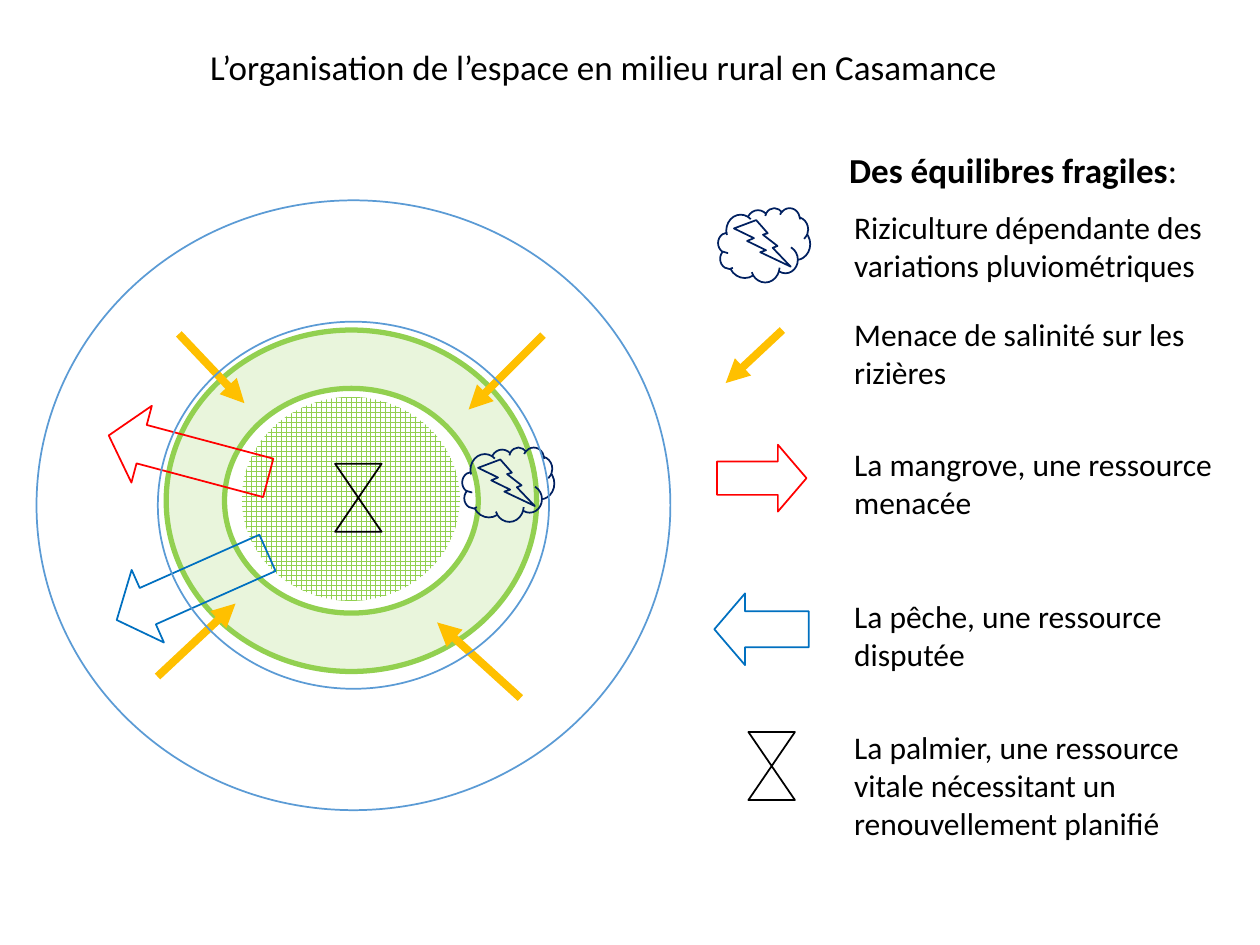
from lxml import etree
from pptx import Presentation
from pptx.dml.color import RGBColor
from pptx.enum import dml, shapes, text
from pptx.oxml import ns
from pptx.util import Pt

INK = {
    "black": "000000", "white": "FFFFFF", "green": "92D050", "gold": "FFC000",
    "red": "FF0000", "blue": "0070C0", "navy": "002060", "sky": "5B9BD5",
}
FONT = "Calibri"
KIND = shapes.MSO_SHAPE


def rgb(name):
    return RGBColor.from_string(INK[name])


def add_shape(slide, kind, box, line=None, width=1, turn=0, adj=()):
    """Add an unfilled preset shape; box is left, top, width, height."""
    shape = slide.shapes.add_shape(kind, *map(Pt, box))
    shape.shadow.inherit = False
    shape.rotation = turn
    for i, value in enumerate(adj):
        shape.adjustments[i] = value
    shape.fill.background()
    if line:
        shape.line.color.rgb = rgb(line)
        shape.line.width = Pt(width)
    else:
        shape.line.fill.background()
    return shape


def add_text(slide, box, runs, size=18, wrap=True):
    """Add one paragraph from (words, bold) runs."""
    frame = slide.shapes.add_textbox(*map(Pt, box)).text_frame
    frame.word_wrap = wrap
    frame.auto_size = text.MSO_AUTO_SIZE.SHAPE_TO_FIT_TEXT
    for words, bold in runs:
        run = frame.paragraphs[0].add_run()
        run.text = words
        font = run.font
        font.name, font.size, font.bold = FONT, Pt(size), bold
        font.color.rgb = rgb("black")


def add_salt(slide, ends):
    """Add a thick gold arrow; ends is x1, y1, x2, y2."""
    link = slide.shapes.add_connector(
        shapes.MSO_CONNECTOR.STRAIGHT, *map(Pt, ends))
    link.line.color.rgb = rgb("gold")
    link.line.width = Pt(4.5)
    etree.SubElement(link.line._get_or_add_ln(), ns.qn("a:tailEnd"), type="triangle")
    etree.SubElement(link._element.spPr, ns.qn("a:effectLst"))


def add_storm(slide, x, y):
    add_shape(slide, KIND.CLOUD, (x, y, 52.6, 42.5), "navy")
    add_shape(slide, KIND.LIGHTNING_BOLT, (x + 9, y + 7, 32.4, 26.6), "navy")


def add_flow(slide, box, line, turn):
    add_shape(slide, KIND.DOWN_ARROW, box, line, turn=turn, adj=(0.5, 0.428))


def add_palm(slide, x, y):
    add_shape(slide, KIND.FLOWCHART_COLLATE, (x, y, 26.6, 38.9), "black")


def add_rings(slide):
    field = add_shape(slide, KIND.DONUT, (95, 188.6, 211.7, 195.1),
                      "green", 3, adj=(0.171,))
    field.fill.solid()
    field.fill.fore_color.rgb = rgb("green")
    tint = field._element.spPr.find(ns.qn("a:solidFill"))[0]
    etree.SubElement(tint, ns.qn("a:alpha"), val="20000")

    core = add_shape(slide, KIND.OVAL, (138.2, 226.8, 124.6, 116.6))
    core.fill.patterned()
    core.fill.pattern = dml.MSO_PATTERN.LARGE_GRID
    core.fill.fore_color.rgb = rgb("green")
    core.fill.back_color.rgb = rgb("white")


def add_map(slide):
    add_rings(slide)
    for ends in (
        (102.2, 190.8, 139.7, 230.4),
        (310.3, 191.5, 267.8, 234),
        (297.4, 398.9, 249.8, 355.7),
        (90, 386.6, 134.6, 344.9),
    ):
        add_salt(slide, ends)
    add_flow(slide, (85, 213.8, 45.4, 94.3), "red", 104.9)
    add_flow(slide, (87.1, 288, 45.4, 94.3), "blue", 66)
    add_storm(slide, 264.2, 255.6)
    add_palm(slide, 191.5, 265)
    add_shape(slide, KIND.DONUT, (20.9, 114.5, 362.2, 348.5), "sky", adj=(0.199,))


def add_legend(slide):
    add_text(slide, (478.1, 81.4, 231.1, 55.4),
             [("Des équilibres fragiles", True), (":", False)], 20)
    add_storm(slide, 410.4, 118.8)
    add_salt(slide, (447.1, 188.6, 414.7, 218.9))
    add_flow(slide, (416.2, 247.7, 38.2, 51.1), "red", 270)
    add_flow(slide, (414.7, 332.6, 41, 54), "blue", 90)
    add_palm(slide, 427.7, 418.3)
    for top, high, words in (
        (115.2, 51, "Riziculture dépendante des variations pluviométriques"),
        (176.4, 51, "Menace de salinité sur les rizières"),
        (250.6, 51, "La mangrove, une ressource menacée"),
        (337.7, 51, "La pêche, une ressource disputée"),
        (412.6, 72.7, "La palmier, une ressource vitale nécessitant "
                      "un renouvellement planifié"),
    ):
        add_text(slide, (481, top, 239, high), [(words, False)])


def main():
    deck = Presentation()
    deck.slide_width, deck.slide_height = Pt(720), Pt(540)
    slide = deck.slides.add_slide(deck.slide_layouts[6])
    add_text(slide, (113, 22.3, 473.8, 31.7),
             [("L’organisation de l’espace en milieu rural en Casamance", False)],
             20, wrap=False)
    add_map(slide)
    add_legend(slide)
    deck.save("out.pptx")


if __name__ == "__main__":
    main()
